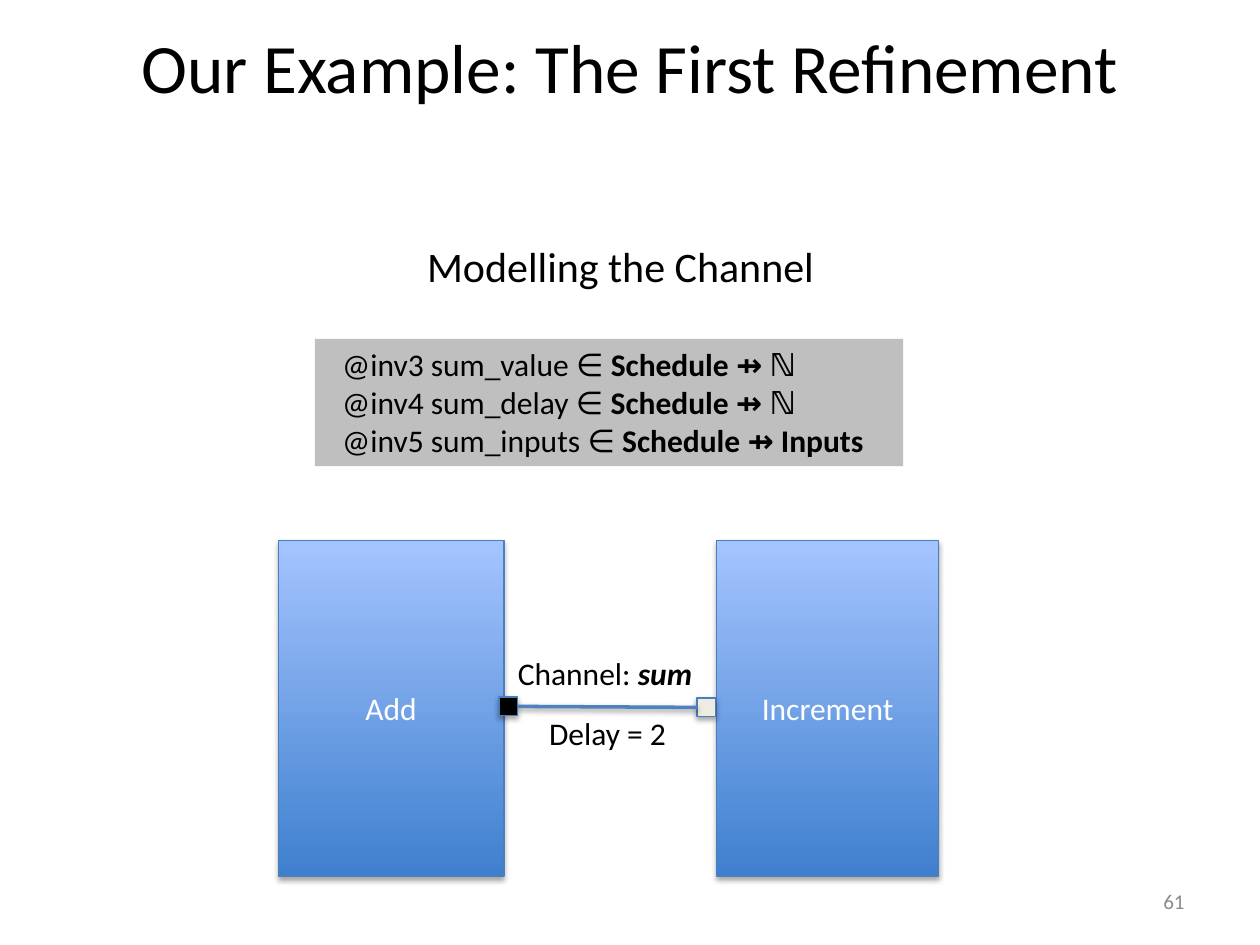
from lxml import etree
from pptx import Presentation
from pptx.dml.color import RGBColor
from pptx.enum.shapes import MSO_CONNECTOR, MSO_SHAPE
from pptx.enum.text import MSO_ANCHOR, MSO_AUTO_SIZE, PP_ALIGN
from pptx.oxml import parse_xml
from pptx.util import Cm, Pt

RECT = MSO_SHAPE.RECTANGLE
STRAIGHT = MSO_CONNECTOR.STRAIGHT
MIDDLE, TOP = MSO_ANCHOR.MIDDLE, MSO_ANCHOR.TOP
LEFT, CENTER, RIGHT = PP_ALIGN.LEFT, PP_ALIGN.CENTER, PP_ALIGN.RIGHT
NO_AUTOFIT = MSO_AUTO_SIZE.NONE

FONT = "Calibri"
BLACK, WHITE, GREY = "000000", "FFFFFF", "8C8C8C"
OUTLINE = "4B7EBC"
NS = "http://schemas.openxmlformats.org/drawingml/2006/main"


def color(value):
    return RGBColor.from_string(value)


def write(tf, lines, size=18, fill=BLACK, align=LEFT, anchor=TOP, wrap=True):
    """Fill a text frame; each line is a list of (text, bold, italic)."""
    tf.word_wrap = wrap
    tf.auto_size = NO_AUTOFIT
    tf.vertical_anchor = anchor
    for i, runs in enumerate(lines):
        p = tf.add_paragraph() if i else tf.paragraphs[0]
        p.alignment = align
        p.font.name = FONT
        p.font.size = Pt(size)
        p.font.color.rgb = color(fill)
        for text, bold, italic in runs:
            r = p.add_run()
            r.text = text
            if bold:
                r.font.bold = True
            if italic:
                r.font.italic = True


def plain(text):
    return [[(text, False, False)]]


def add_label(s, box, lines, **style):
    sp = s.shapes.add_textbox(*map(Cm, box))
    write(sp.text_frame, lines, **style)


def add_shadow(sp, distance, opacity):
    """Soft shadow straight below; call after fill and line are set."""
    spPr = sp._element.spPr
    for old in spPr.findall(f"{{{NS}}}effectLst"):
        spPr.remove(old)
    spPr.append(parse_xml(
        f'<a:effectLst xmlns:a="{NS}"><a:outerShdw blurRad="{Pt(3.1)}" dist="{Pt(distance)}" '
        f'dir="5400000" rotWithShape="0"><a:srgbClr val="{BLACK}">'
        f'<a:alpha val="{opacity * 1000}"/></a:srgbClr></a:outerShdw></a:effectLst>'))


def add_block(s, box, fill=None, text=None):
    """Outlined rectangle, with a blue gradient unless a fill is given."""
    sp = s.shapes.add_shape(RECT, *map(Cm, box))
    if fill:
        sp.fill.solid()
        sp.fill.fore_color.rgb = color(fill)
    else:
        sp.fill.gradient()
        sp.fill.gradient_angle = 90
        for stop, (position, shade) in zip(sp.fill.gradient_stops, [(0, "3F80CE"), (1, "A4C4FF")]):
            stop.position = position
            stop.color.rgb = color(shade)
    sp.line.color.rgb = color(OUTLINE)
    sp.line.width = Pt(0.75)
    add_shadow(sp, 1.8, 35)
    if text:
        write(sp.text_frame, plain(text), fill=WHITE, align=CENTER, anchor=MIDDLE)


def add_title(s, box, text):
    title = s.shapes.title
    title.left, title.top, title.width, title.height = map(Cm, box)
    write(title.text_frame, plain(text), size=39.6, align=CENTER, anchor=MIDDLE)


def add_invariants(s, box):
    sp = s.shapes.add_shape(RECT, *map(Cm, box))
    sp.shadow.inherit = False
    sp.fill.solid()
    sp.fill.fore_color.rgb = color("BFBFBF")
    sp.line.fill.background()
    sp.text_frame.margin_left = Cm(0.55)
    invariants = [
        ("@inv3 sum_value ∈ ", "Schedule ⇸ ℕ"),
        ("@inv4 sum_delay ∈ ", "Schedule ⇸ ℕ"),
        ("@inv5 sum_inputs ∈ ", "Schedule ⇸ Inputs"),
    ]
    write(sp.text_frame, [[(name, False, False), (kind, True, False)] for name, kind in invariants])


def add_channel_diagram(s, box):
    x, y, w, h = box
    add_w, inc_w, port = 4.55, 4.47, 0.38
    inc_x = x + w - inc_w
    out_x, in_x = x + 4.45, inc_x - port - 0.02
    port_y = y + 3.15

    # Components and their ports
    add_block(s, (x, y, add_w, h), text="Add")
    add_block(s, (inc_x, y, inc_w, h), text="Increment")
    add_block(s, (out_x, port_y, port, port), fill=BLACK)
    add_block(s, (in_x, port_y + 0.02, port, port), fill="EEECE1")

    # Channel between the ports
    line = s.shapes.add_connector(STRAIGHT, Cm(out_x + port), Cm(port_y + port / 2),
                                  Cm(in_x), Cm(port_y + 0.02 + port / 2))
    line.line.color.rgb = color("4F81BD")
    line.line.width = Pt(2)
    add_shadow(line, 1.6, 38)

    # Channel labels
    add_label(s, (x + 4.58, y + 2.16, 4.19, 1.02),
              [[("Channel: ", False, False), ("sum", True, True)]], wrap=False)
    add_label(s, (x + 5.21, y + 3.37, 3.02, 1.02), plain("Delay = 2"), wrap=False)


def main():
    prs = Presentation()
    prs.slide_width, prs.slide_height = Cm(25.4), Cm(19.05)
    s = prs.slides.add_slide(prs.slide_layouts[5])

    add_title(s, (1.27, 0.76, 22.86, 1.12), "Our Example: The First Refinement")
    add_label(s, (18.21, 17.65, 5.92, 1.02), plain("61"),
              size=12, fill=GREY, align=RIGHT, anchor=MIDDLE)
    add_invariants(s, (6.35, 6.83, 11.86, 2.57))
    add_channel_diagram(s, (5.61, 10.9, 13.31, 6.76))
    add_label(s, (8.36, 4.72, 8.38, 1.27), plain("Modelling the Channel"), size=24, wrap=False)

    prs.save("out.pptx")


if __name__ == "__main__":
    main()
